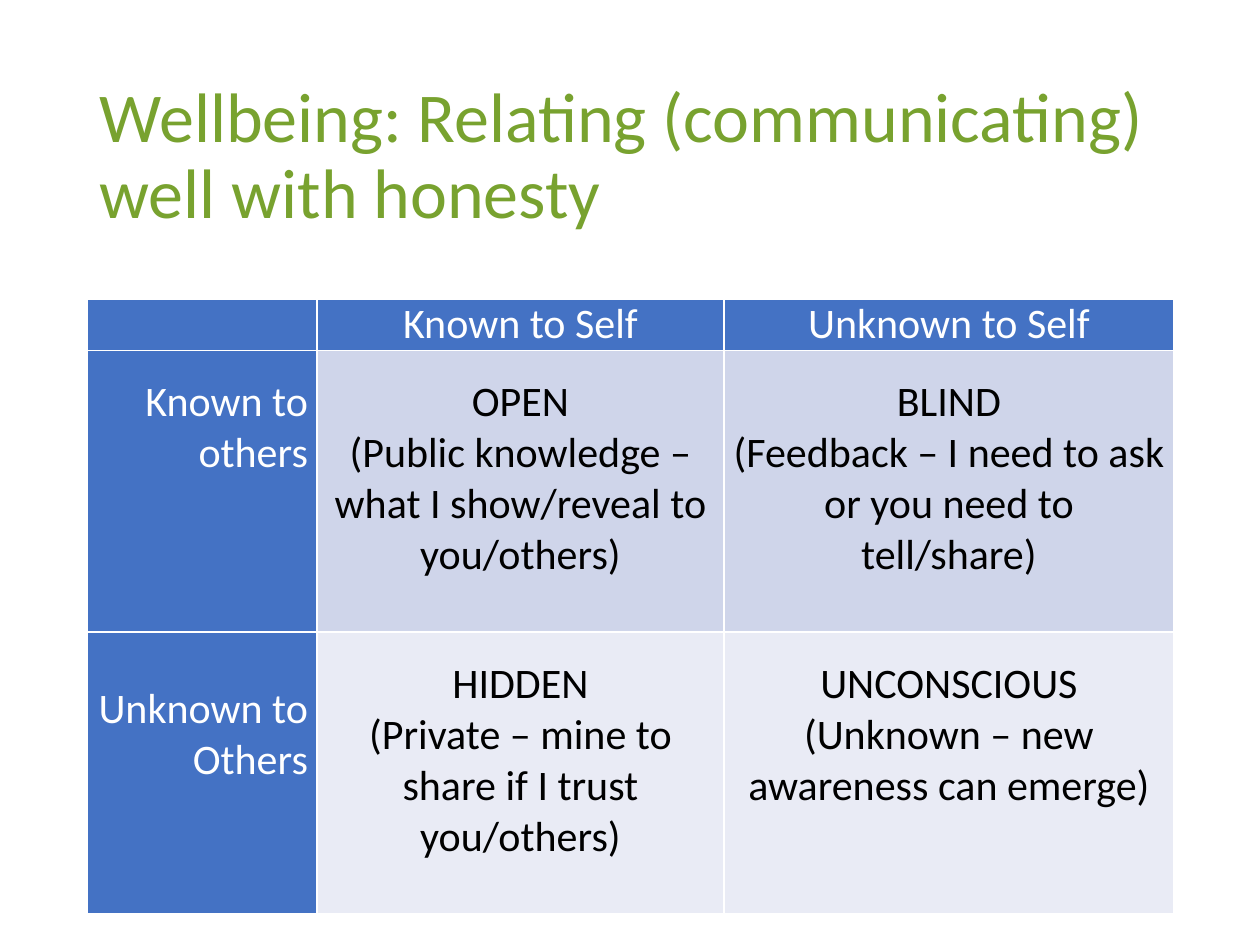
import pptx
import pptx.util
import pptx.dml.color
import pptx.enum.text
import lxml.etree

PX = 7257
NS = "{http://schemas.openxmlformats.org/drawingml/2006/main}"
HUES = {"title": "78A22F", "head": "4472C4", "upper": "CFD5EA",
        "lower": "E9EBF5", "white": "FFFFFF", "black": "000000"}
ALIGN = pptx.enum.text.PP_ALIGN


def style(par, size, hue, align):
    par.alignment = align
    par.font.name = "Calibri"
    par.font.size = pptx.util.Pt(size)
    par.font.color.rgb = pptx.dml.color.RGBColor.from_string(HUES[hue])


def edge(cell):
    props = cell._tc.get_or_add_tcPr()
    for side in ("lnL", "lnR", "lnT", "lnB"):
        line = lxml.etree.SubElement(props, NS + side, w="12700")
        fill = lxml.etree.SubElement(line, NS + "solidFill")
        lxml.etree.SubElement(fill, NS + "srgbClr", val=HUES["white"])


deck = pptx.Presentation()
deck.slide_width = 1260 * PX
deck.slide_height = 945 * PX
slide = deck.slides.add_slide(deck.slide_layouts[5])

title = slide.shapes.title
title.left, title.top, title.width, title.height = [n * PX for n in (87, 50, 1087, 216)]
frame = title.text_frame
frame.text = "Wellbeing: Relating (communicating) well with honesty"
frame.word_wrap = True
frame.auto_size = pptx.enum.text.MSO_AUTO_SIZE.NONE
frame.vertical_anchor = pptx.enum.text.MSO_ANCHOR.MIDDLE
style(frame.paragraphs[0], 40, "title", ALIGN.LEFT)
frame.paragraphs[0].line_spacing = 0.9

rows = [
    ["", "Known to Self", "Unknown to Self"],
    ["Known to others",
     "OPEN\n(Public knowledge – what I show/reveal to you/others)",
     "BLIND\n(Feedback – I need to ask or you need to tell/share)"],
    ["Unknown to Others",
     "HIDDEN\n(Private – mine to share if I trust you/others)",
     "UNCONSCIOUS\n(Unknown – new awareness can emerge)"],
]
widths = [230, 407, 450]
heights = [51, 282, 282]
tops = [[0, 0, 0], [26, 26, 26], [51, 26, 26]]
fills = ["head", "upper", "lower"]

table = slide.shapes.add_table(
    3, 3, 87 * PX, 299 * PX, sum(widths) * PX, sum(heights) * PX).table
for col, width in zip(table.columns, widths):
    col.width = width * PX
for r, row in enumerate(rows):
    table.rows[r].height = heights[r] * PX
    for c, text in enumerate(row):
        cell = table.cell(r, c)
        label = r == 0 or c == 0
        edge(cell)
        cell.fill.solid()
        cell.fill.fore_color.rgb = pptx.dml.color.RGBColor.from_string(
            HUES["head" if label else fills[r]])
        cell.margin_left = cell.margin_right = 9 * PX
        cell.margin_top = tops[r][c] * PX
        cell.margin_bottom = 0
        cell.text = text
        for par in cell.text_frame.paragraphs:
            style(par, 24, "white" if label else "black",
                  ALIGN.RIGHT if c == 0 else ALIGN.CENTER)

deck.save("out.pptx")
